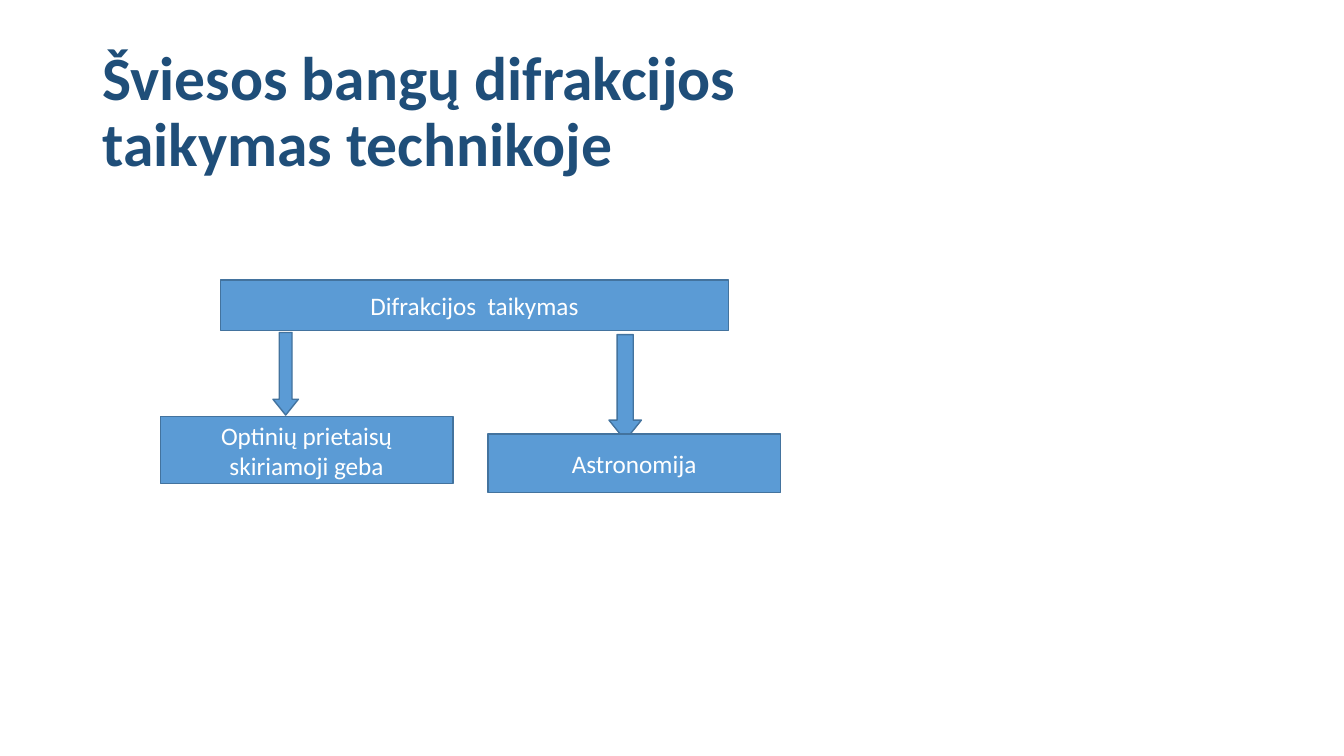
from dataclasses import dataclass

from pptx import Presentation
from pptx.dml.color import RGBColor
from pptx.enum import shapes, text
from pptx.shapes.autoshape import Shape
from pptx.slide import Slide
from pptx.util import Pt

NAVY = RGBColor(0x1F, 0x4E, 0x79)
BLUE = RGBColor(0x5B, 0x9B, 0xD5)
OUTLINE = RGBColor(0x43, 0x73, 0x9E)
WHITE = RGBColor(0xFF, 0xFF, 0xFF)
FONT = "Calibri"
BRANCH_WIDTH = 209


@dataclass(frozen=True)
class Area:
    left: float
    top: float
    width: float
    height: float

    def lengths(self) -> tuple[Pt, Pt, Pt, Pt]:
        return Pt(self.left), Pt(self.top), Pt(self.width), Pt(self.height)


@dataclass(frozen=True)
class Topic:
    label: str
    area: Area


@dataclass(frozen=True)
class Branch:
    arrow: Area
    topic: Topic


HEADING = Topic("Šviesos bangų difrakcijos taikymas technikoje", Area(66, 28.8, 591, 104.4))
APPLICATIONS = Topic("Difrakcijos  taikymas", Area(157.5, 200, 363, 36))
BRANCHES = [
    Branch(
        Area(195, 237.5, 18.2, 59),
        Topic("Optinių prietaisų skiriamoji geba", Area(114.5, 297.5, BRANCH_WIDTH, 48)),
    ),
    Branch(
        Area(435, 239, 23.2, 75.5),
        Topic("Astronomija", Area(348.5, 310, BRANCH_WIDTH, 42)),
    ),
]


def write(shape: Shape, label: str, size: float, color: RGBColor, bold: bool = False) -> None:
    frame = shape.text_frame
    frame.word_wrap = True
    frame.vertical_anchor = text.MSO_ANCHOR.MIDDLE
    run = frame.paragraphs[0].add_run()
    run.text = label
    run.font.name = FONT
    run.font.size = Pt(size)
    run.font.bold = bold
    run.font.color.rgb = color


def draw_heading(slide: Slide, heading: Topic) -> None:
    box = slide.shapes.add_textbox(*heading.area.lengths())
    write(box, heading.label, 44, NAVY, bold=True)
    box.text_frame.paragraphs[0].line_spacing = 0.9


def draw_block(slide: Slide, kind: shapes.MSO_SHAPE, area: Area) -> Shape:
    block = slide.shapes.add_shape(kind, *area.lengths())
    block.shadow.inherit = False
    block.fill.solid()
    block.fill.fore_color.rgb = BLUE
    block.line.color.rgb = OUTLINE
    block.line.width = Pt(1)
    return block


def draw_topic(slide: Slide, topic: Topic) -> None:
    block = draw_block(slide, shapes.MSO_SHAPE.RECTANGLE, topic.area)
    write(block, topic.label, 18, WHITE)
    block.text_frame.paragraphs[0].alignment = text.PP_ALIGN.CENTER


def draw_branch(slide: Slide, branch: Branch) -> None:
    arrow = draw_block(slide, shapes.MSO_SHAPE.DOWN_ARROW, branch.arrow)
    arrow.adjustments[0] = 0.5
    arrow.adjustments[1] = 0.62
    draw_topic(slide, branch.topic)


def main() -> None:
    deck = Presentation()
    deck.slide_width = Pt(960)
    deck.slide_height = Pt(540)
    slide = deck.slides.add_slide(deck.slide_layouts[6])
    draw_heading(slide, HEADING)
    draw_topic(slide, APPLICATIONS)
    for branch in BRANCHES:
        draw_branch(slide, branch)
    deck.save("out.pptx")


if __name__ == "__main__":
    main()
